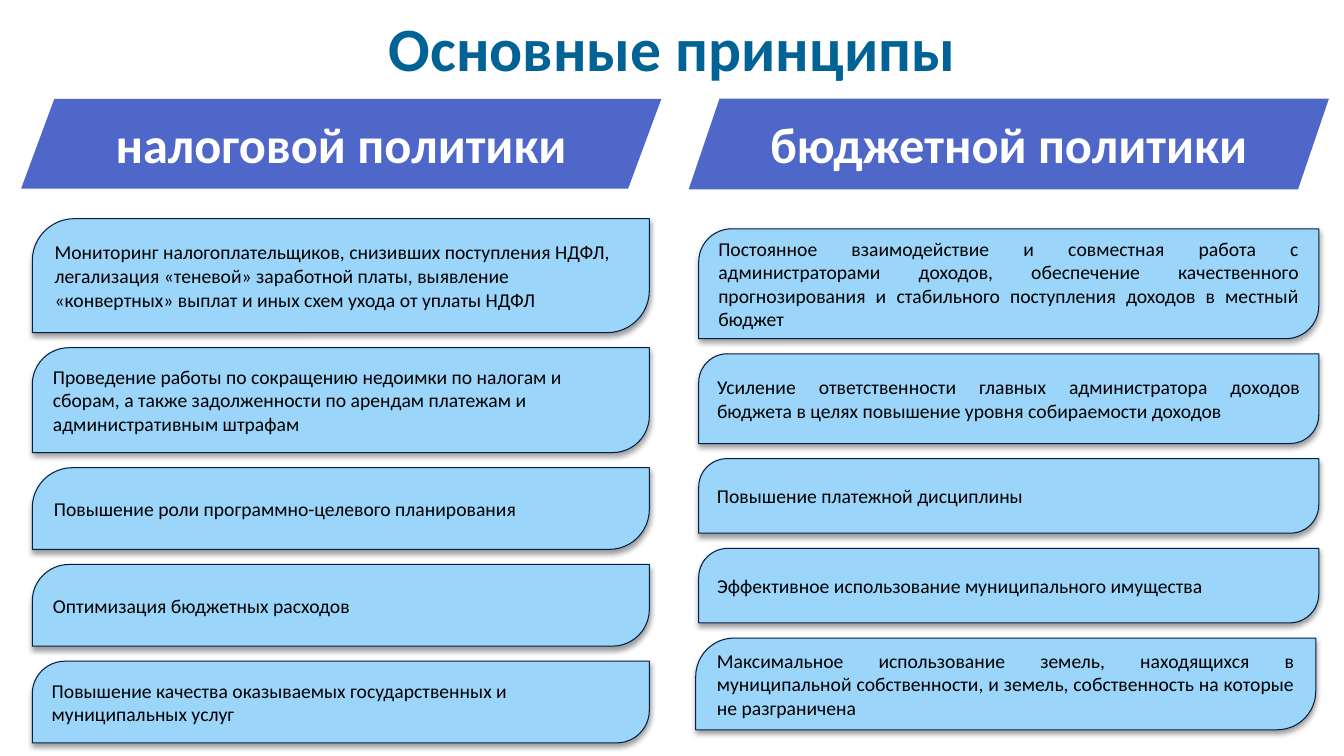
from lxml import etree
from pptx import Presentation
from pptx.dml.color import RGBColor
from pptx.enum.shapes import MSO_SHAPE
from pptx.enum.text import MSO_ANCHOR, MSO_AUTO_SIZE, PP_ALIGN
from pptx.oxml.ns import qn
from pptx.util import Pt

PX = 9144  # EMU per px, 100 px to the inch
LEFT, CENTER, JUSTIFY = PP_ALIGN.LEFT, PP_ALIGN.CENTER, PP_ALIGN.JUSTIFY
TOP, MIDDLE = MSO_ANCHOR.TOP, MSO_ANCHOR.MIDDLE
PARALLELOGRAM = MSO_SHAPE.PARALLELOGRAM
CARD = MSO_SHAPE.ROUND_2_DIAG_RECTANGLE
NO_AUTOFIT = MSO_AUTO_SIZE.NONE

FONT = "Calibri"
GAP = 15

# Cards: height, corner rounding, text
TAX_CARDS = [
    (113, 0.37, "Мониторинг налогоплательщиков, снизивших поступления НДФЛ, "
     "легализация «теневой» заработной платы, выявление «конвертных» выплат "
     "и иных схем ухода от уплаты НДФЛ"),
    (104, 0.35, "Проведение работы по сокращению недоимки по налогам и сборам, "
     "а также задолженности по арендам платежам и административным штрафам"),
    (81, 0.49, "Повышение роли программно-целевого планирования"),
    (81, 0.45, "Оптимизация бюджетных расходов"),
    (81, 0.4, "Повышение качества оказываемых государственных и "
     "муниципальных услуг"),
]
BUDGET_CARDS = [
    (109, 0.3, "Постоянное взаимодействие и совместная работа с "
     "администраторами доходов, обеспечение качественного прогнозирования "
     "и стабильного поступления доходов в местный бюджет"),
    (89, 0.32, "Усиление ответственности главных администратора доходов "
     "бюджета в целях повышение уровня собираемости доходов"),
    (74, 0.38, "Повышение платежной дисциплины"),
    (74, 0.39, "Эффективное использование муниципального имущества"),
    (91, 0.42, "Максимальное использование земель, находящихся в муниципальной "
     "собственности, и земель, собственность на которые не разграничена"),
]


def rgb(value):
    return RGBColor.from_string(value)


def place(sp, x, y, w, h):
    sp.left, sp.top, sp.width, sp.height = (n * PX for n in (x, y, w, h))


def write(sp, text, size=14, color="000000", bold=False, align=LEFT,
          anchor=MIDDLE, wrap=True):
    tf = sp.text_frame
    tf.word_wrap = wrap
    tf.auto_size = NO_AUTOFIT
    tf.vertical_anchor = anchor
    p = tf.paragraphs[0]
    p.alignment = align
    r = p.add_run()
    r.text = text
    r.font.name = FONT
    r.font.size = Pt(size)
    r.font.bold = bold
    r.font.color.rgb = rgb(color)


def add_shape(slide, kind, box, fill, adjust, line=None):
    sp = slide.shapes.add_shape(kind, *(n * PX for n in box))
    sp.shadow.inherit = False
    sp.adjustments[0] = adjust
    sp.fill.solid()
    sp.fill.fore_color.rgb = rgb(fill)
    if line:
        sp.line.color.rgb = rgb(line)
        sp.line.width = Pt(0.75)
    else:
        sp.line.fill.background()
    return sp


def add_shadow(sp):
    effects = sp._element.spPr.find(qn("a:effectLst"))
    shadow = etree.SubElement(
        effects, qn("a:outerShdw"), blurRad=str(Pt(4)), dist=str(Pt(2)),
        dir="5400000", algn="ctr", rotWithShape="0")
    color = etree.SubElement(shadow, qn("a:srgbClr"), val="000000")
    etree.SubElement(color, qn("a:alpha"), val="38000")


def add_title(slide, box, text):
    sp = slide.shapes.title
    place(sp, *box)
    write(sp, text, size=44, color="016296", bold=True, align=CENTER,
          anchor=TOP, wrap=False)


def add_banner(slide, box, slant, text):
    sp = add_shape(slide, PARALLELOGRAM, box, "4E67C8", slant)
    write(sp, text, size=36, color="FFFFFF", bold=True, align=CENTER,
          anchor=TOP)


def add_cards(slide, x, y, w, cards, align, last_shift=0):
    """Stack the cards downwards; last_shift moves the last one sideways."""
    for i, (h, rounding, text) in enumerate(cards, 1):
        shift = last_shift if i == len(cards) else 0
        sp = add_shape(slide, CARD, (x + shift, y, w, h), "9BD5FA", rounding,
                       line="041F44")
        add_shadow(sp)
        write(sp, text, align=align)
        y += h + GAP


def main():
    prs = Presentation()
    prs.slide_width, prs.slide_height = 1333 * PX, 750 * PX
    slide = prs.slides.add_slide(prs.slide_layouts[5])

    add_title(slide, (373, 5, 588, 84), "Основные принципы")

    # Tax policy column
    add_banner(slide, (21, 98, 635, 89), 0.37, "налоговой политики")
    add_cards(slide, 32, 217, 612, TAX_CARDS, LEFT)

    # Budget policy column
    add_banner(slide, (683, 98, 635, 90), 0.34, "бюджетной политики")
    add_cards(slide, 693, 227, 615, BUDGET_CARDS, JUSTIFY, last_shift=-3)

    prs.save("out.pptx")


if __name__ == "__main__":
    main()
